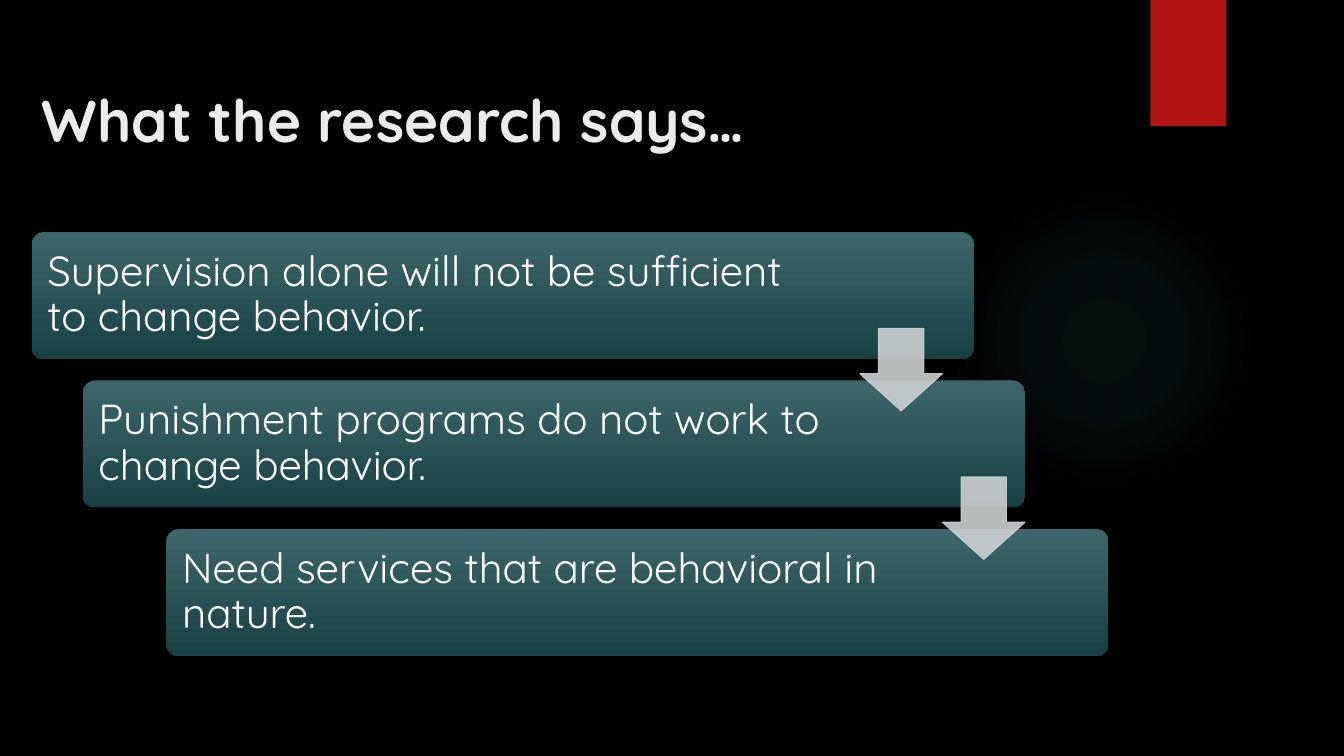
import pptx
import pptx.dml.color
import pptx.enum.shapes
import pptx.enum.text
import pptx.oxml
import pptx.oxml.ns
import pptx.util

Pt = pptx.util.Pt
RGB = pptx.dml.color.RGBColor
SHAPE = pptx.enum.shapes.MSO_SHAPE
ALIGN = pptx.enum.text.PP_ALIGN

BLACK = RGB(0x00, 0x00, 0x00)
WHITE = RGB(0xFF, 0xFF, 0xFF)
TITLE = RGB(0xEB, 0xEB, 0xEB)
RED = RGB(0xB0, 0x15, 0x13)
TEAL_LIGHT = RGB(0x3D, 0x66, 0x6A)
TEAL_DARK = RGB(0x18, 0x41, 0x44)
GLOW = RGB(0x50, 0xB9, 0xC1)
ARROW = RGB(0xCD, 0xD0, 0xD1)
FONT = "Quicksand"

# Text, and the left edge and right text margin of its card
FINDINGS = [
    ("Supervision alone will not be sufficient to change behavior.", 22.5, 101),
    ("Punishment programs do not work to change behavior.", 59, 127),
    ("Need services that are behavioral in nature.", 118.75, 127),
]
CARD_TOP, CARD_STEP = 165.7, 106.1
CARD_WIDTH, CARD_HEIGHT = 673.2, 90.7
ARROW_LEFT, ARROW_TOP, ARROW_SIZE = 614.2, 234.5, 59


def add_text(tf, text, size=30, color=WHITE, bold=False, line_spacing=None):
    tf.word_wrap = True
    tf.vertical_anchor = pptx.enum.text.MSO_ANCHOR.MIDDLE
    p = tf.paragraphs[0]
    p.alignment = ALIGN.LEFT
    p.line_spacing = line_spacing
    r = p.add_run()
    r.text = text
    r.font.name = FONT
    r.font.size = Pt(size)
    r.font.bold = bold
    r.font.color.rgb = color


def add_shape(s, kind, left, top, width, height, color=None):
    sp = s.shapes.add_shape(kind, Pt(left), Pt(top), Pt(width), Pt(height))
    sp.shadow.inherit = False
    sp.line.fill.background()
    if color is not None:
        sp.fill.solid()
        sp.fill.fore_color.rgb = color
    return sp


def add_glow(s, left, top, size):
    sp = add_shape(s, SHAPE.OVAL, left, top, size, size)
    stops = "".join(
        f'<a:gs pos="{pos * 1000}"><a:srgbClr val="{GLOW}">'
        f'<a:alpha val="{alpha * 1000}"/></a:srgbClr></a:gs>'
        for pos, alpha in [(0, 7), (36, 6), (69, 0)])
    fill = pptx.oxml.parse_xml(
        f'<a:gradFill {pptx.oxml.ns.nsdecls("a")}><a:gsLst>{stops}</a:gsLst>'
        '<a:path path="circle"><a:fillToRect l="50000" t="50000" '
        'r="50000" b="50000"/></a:path></a:gradFill>')
    sp._element.spPr.find(pptx.oxml.ns.qn("a:prstGeom")).addnext(fill)


def add_card(s, text, left, top, right_margin):
    sp = add_shape(s, SHAPE.ROUNDED_RECTANGLE, left, top, CARD_WIDTH, CARD_HEIGHT)
    sp.adjustments[0] = 0.1
    sp.fill.gradient()
    sp.fill.gradient_angle = 270
    for stop, color, pos in zip(sp.fill.gradient_stops, (TEAL_LIGHT, TEAL_DARK), (0, 1)):
        stop.color.rgb = color
        stop.position = pos
    tf = sp.text_frame
    tf.margin_left = tf.margin_top = tf.margin_bottom = Pt(8.64)
    tf.margin_right = Pt(right_margin)
    add_text(tf, text, line_spacing=0.9)


def add_down_arrow(s, left, top):
    sp = add_shape(s, SHAPE.DOWN_ARROW, left, top, ARROW_SIZE, ARROW_SIZE, ARROW)
    sp.adjustments[0] = 0.55
    sp.adjustments[1] = 0.45
    sp.line.color.rgb = ARROW
    sp.line.width = Pt(0.75)
    for color in sp._element.spPr.iter(pptx.oxml.ns.qn("a:srgbClr")):
        color.append(pptx.oxml.parse_xml(
            f'<a:alpha {pptx.oxml.ns.nsdecls("a")} val="90000"/>'))


def main():
    prs = pptx.Presentation()
    prs.slide_width, prs.slide_height = Pt(960), Pt(540)
    s = prs.slides.add_slide(prs.slide_layouts[5])
    s.background.fill.solid()
    s.background.fill.fore_color.rgb = BLACK

    # Backdrop
    add_glow(s, 677.5, 131.8, 221.8)
    add_shape(s, SHAPE.RECTANGLE, 821.75, 0, 54, 90, RED)

    # Title
    title = s.shapes.title
    title.left, title.top = Pt(22.5), Pt(31)
    title.width, title.height = Pt(792), Pt(108)
    add_text(title.text_frame, "What the research says…", size=42, color=TITLE, bold=True)

    # Staircase of findings, then the arrows over it
    for i, (text, left, right_margin) in enumerate(FINDINGS):
        add_card(s, text, left, CARD_TOP + i * CARD_STEP, right_margin)
    for i in range(len(FINDINGS) - 1):
        add_down_arrow(s, ARROW_LEFT + i * ARROW_SIZE, ARROW_TOP + i * CARD_STEP)

    prs.save("out.pptx")


if __name__ == "__main__":
    main()
